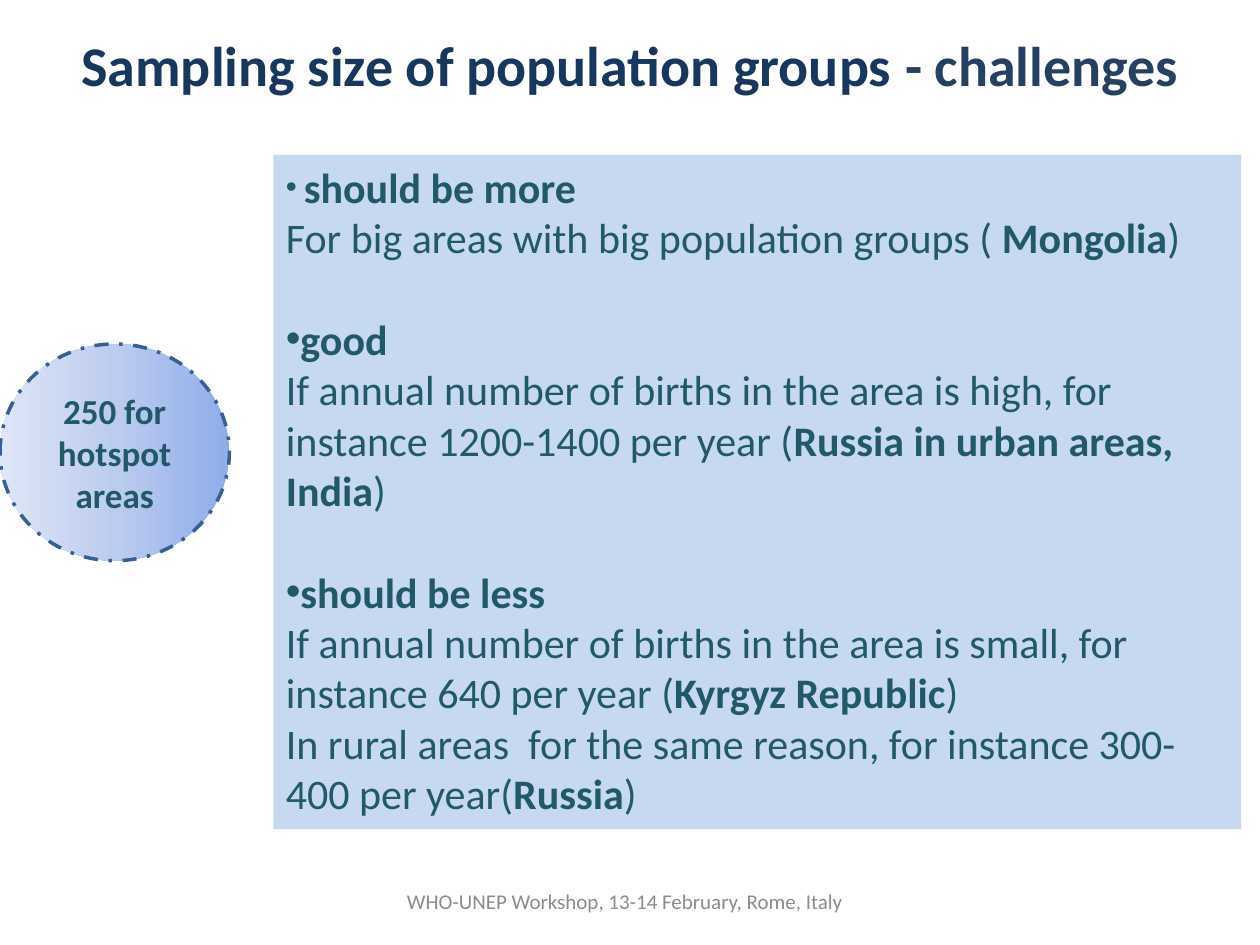
"""Build the slide on sampling size challenges for population groups."""
import copy

from lxml import etree
from pptx import Presentation, util as u
from pptx.dml.color import RGBColor
from pptx.enum import dml, shapes, text
from pptx.oxml.ns import qn

COLORS = {
    "panel": "C6D9F1", "body": "215968", "title": "17375E", "title_end": "254061",
    "footer": "8C8C8C", "outline": "376092",
}
GRADIENT = [(0, "8FADE9"), (0.5, "BCCCEF"), (1, "DEE6F7")]

TITLE = [("Sampling size of population groups ", 32, "title", True),
         ("- challenges", 32, "title_end", True)]
FOOTER = [("WHO-UNEP Workshop, 13-14 February, Rome, Italy", 12, "footer", False)]
HOTSPOT = [("250 for hotspot areas", 20, "body", True)]
GROUPS = [
    ("should be more", [
        ("For big areas with big population groups ( ", "Mongolia")]),
    ("good", [
        ("If annual number of births in the area is high, for instance 1200-1400 per year (",
         "Russia in urban areas, India")]),
    ("should be less", [
        ("If annual number of births in the area is small, for instance 640 per year (",
         "Kyrgyz Republic"),
        ("In rural areas  for the same reason, for instance 300-400 per year(", "Russia")]),
]
BODY_SIZE = 24
BLANK_LINE = 29.3


def rgb(name):
    return RGBColor.from_string(COLORS[name])


def add_runs(p, runs):
    for content, size, color, bold in runs:
        r = p.add_run()
        r.text = content
        r.font.name, r.font.size, r.font.bold = "Calibri", u.Pt(size), bold
        r.font.color.rgb = rgb(color)


def add_bullet(p):
    pPr = p._p.get_or_add_pPr()
    pPr.set("marL", "0")
    pPr.set("indent", "0")
    etree.SubElement(pPr, qn("a:buFont")).set("typeface", "Arial")
    etree.SubElement(pPr, qn("a:buChar")).set("char", "•")


def add_box(s, box, kind=None):
    box = [u.Inches(v) for v in box]
    if kind is None:
        sp = s.shapes.add_textbox(*box)
    else:
        sp = s.shapes.add_shape(kind, *box)
        sp.shadow.inherit = False
    sp.text_frame.word_wrap = True
    return sp


def add_centred(sp, runs):
    tf = sp.text_frame
    tf.vertical_anchor = text.MSO_ANCHOR.MIDDLE
    p = tf.paragraphs[0]
    p.alignment = text.PP_ALIGN.CENTER
    add_runs(p, runs)


def add_panel(s):
    sp = add_box(s, (2.17, 1.23, 7.68, 5.35), shapes.MSO_SHAPE.RECTANGLE)
    sp.fill.solid()
    sp.fill.fore_color.rgb = rgb("panel")
    sp.line.fill.background()
    tf = sp.text_frame
    tf.vertical_anchor = text.MSO_ANCHOR.TOP
    for i, (heading, lines) in enumerate(GROUPS):
        p = tf.add_paragraph() if i else tf.paragraphs[0]
        p.alignment = text.PP_ALIGN.LEFT
        if i:
            p.space_before = u.Pt(BLANK_LINE)
        add_bullet(p)
        lead = [] if i else [(" ", 18, "body", True)]
        add_runs(p, lead + [(heading, BODY_SIZE, "body", True)])
        for plain, place in lines:
            p = tf.add_paragraph()
            p.alignment = text.PP_ALIGN.LEFT
            add_runs(p, [(plain, BODY_SIZE, "body", False),
                         (place, BODY_SIZE, "body", True),
                         (")", BODY_SIZE, "body", False)])


def add_hotspot(s):
    sp = add_box(s, (0, 2.73, 1.82, 1.72), shapes.MSO_SHAPE.OVAL)
    sp.fill.gradient()
    sp.fill.gradient_angle = 180
    stops = sp._element.spPr.find(qn("a:gradFill")).find(qn("a:gsLst"))
    stops.insert(1, copy.deepcopy(stops[0]))
    for stop, (position, color) in zip(sp.fill.gradient_stops, GRADIENT):
        stop.position = position
        stop.color.rgb = RGBColor.from_string(color)
    sp.line.color.rgb = rgb("outline")
    sp.line.width = u.Pt(2)
    sp.line.dash_style = dml.MSO_LINE.DASH_DOT
    add_centred(sp, HOTSPOT)


def main():
    prs = Presentation()
    prs.slide_width, prs.slide_height = u.Inches(10), u.Inches(7.5)
    s = prs.slides.add_slide(prs.slide_layouts[6])
    add_panel(s)
    add_hotspot(s)
    add_centred(add_box(s, (0.5, 0.16, 9, 0.7)), TITLE)
    add_centred(add_box(s, (2.95, 6.95, 4.02, 0.4)), FOOTER)
    prs.save("out.pptx")


if __name__ == "__main__":
    main()
